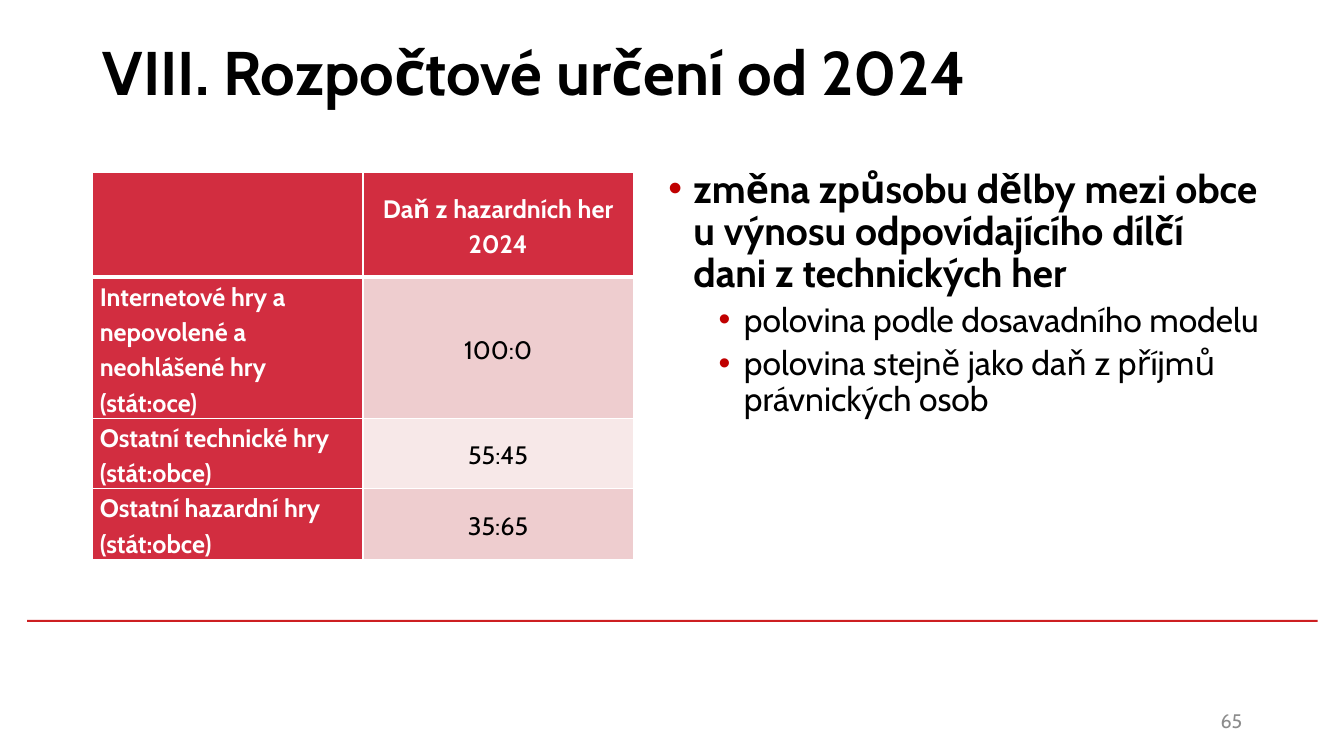
"""Build the slide on how the gambling tax is shared from 2024."""
from lxml.etree import SubElement
from pptx import Presentation
from pptx.dml.color import RGBColor
from pptx.enum.shapes import MSO_SHAPE as Shape
from pptx.enum.text import MSO_ANCHOR as Anchor, PP_ALIGN as Align
from pptx.oxml import parse_xml
from pptx.oxml.ns import nsdecls, qn
from pptx.util import Inches, Pt

COLORS = {
    "text": "000000", "white": "FFFFFF", "rule": "CD1F21", "number": "8C8C8C",
    "bullet": "C00000", "header": "D22D40", "dark_band": "EECDCF", "light_band": "F7E8E8",
}
FONT = "Cabin"
TAX_ROWS = [
    ("", "Daň z\u00a0hazardních her 2024"),
    ("Internetové hry a nepovolené a neohlášené hry\n(stát:oce)", "100:0"),
    ("Ostatní technické hry (stát:obce)", "55:45"),
    ("Ostatní hazardní hry\n(stát:obce)", "35:65"),
]
ROW_HEIGHTS = [1.04, 1.4, 0.7, 0.7]
CHANGES = [
    (0, "změna způsobu dělby mezi obce u výnosu odpovídajícího dílčí dani z technických her"),
    (1, "polovina podle dosavadního modelu"),
    (1, "polovina stejně jako daň z příjmů právnických osob"),
]
LEVELS = [
    {"size": 28, "bold": True, "before": 10, "indent": 0.25},
    {"size": 24, "bold": False, "before": 5, "indent": 0.75},
]


def rgb(name):
    """Return the named colour."""
    return RGBColor.from_string(COLORS[name])


def set_attributes(target, values):
    """Set each attribute of the target from a dict."""
    for name, value in values.items():
        setattr(target, name, value)


def format_paragraph(paragraph, size, color, bold=False, **layout):
    """Apply font and layout values to a paragraph."""
    set_attributes(paragraph, layout)
    set_attributes(paragraph.font, {"name": FONT, "size": Pt(size), "bold": bold})
    paragraph.font.color.rgb = rgb(color)


def add_text_box(slide, box, anchor=Anchor.TOP):
    """Add a wrapping text box and return its text frame."""
    frame = slide.shapes.add_textbox(*map(Inches, box)).text_frame
    set_attributes(frame, {"word_wrap": True, "vertical_anchor": anchor})
    return frame


def add_line_text(slide, box, text, **values):
    """Add a single paragraph centred vertically in its box."""
    frame = add_text_box(slide, box, Anchor.MIDDLE)
    frame.text = text
    format_paragraph(frame.paragraphs[0], **values)


def add_rule(slide):
    """Add the thin red rule across the slide."""
    rule = slide.shapes.add_shape(Shape.RECTANGLE, *map(Inches, (0.27, 6.15, 12.8, 0.02)))
    rule.shadow.inherit = False
    rule.fill.solid()
    rule.fill.fore_color.rgb = rgb("rule")
    rule.line.fill.background()


def add_bullet(paragraph, indent):
    """Give a paragraph a coloured bullet with a hanging indent."""
    properties = paragraph._p.get_or_add_pPr()
    properties.set("marL", str(Inches(indent)))
    properties.set("indent", str(Inches(-0.25)))
    color = SubElement(properties, qn("a:buClr"))
    SubElement(color, qn("a:srgbClr"), val=COLORS["bullet"])
    SubElement(properties, qn("a:buFont"), typeface="Arial")
    SubElement(properties, qn("a:buChar"), char="•")


def add_changes(slide):
    """Add the bulleted list of changes."""
    frame = add_text_box(slide, (6.53, 1.63, 6.06, 4.57))
    for index, (level, text) in enumerate(CHANGES):
        paragraph = frame.paragraphs[0] if index == 0 else frame.add_paragraph()
        style = LEVELS[level]
        paragraph.text = text
        add_bullet(paragraph, style["indent"])
        format_paragraph(paragraph, style["size"], "text", style["bold"], level=level,
                         line_spacing=0.9, space_before=Pt(style["before"] if index else 0))


def set_borders(cell, widths):
    """Draw white cell borders with the given widths in points."""
    properties = cell._tc.get_or_add_tcPr()
    for position, (side, width) in enumerate(widths.items()):
        properties.insert(position, parse_xml(
            f'<a:ln{side} {nsdecls("a")} w="{Pt(width)}"><a:solidFill>'
            f'<a:srgbClr val="{COLORS["white"]}"/></a:solidFill></a:ln{side}>'))


def fill_cell(cell, text, row, column):
    """Write and style one cell by its place in the table."""
    heading = row == 0 or column == 0
    band = "dark_band" if row % 2 else "light_band"
    set_attributes(cell, {
        "text": text, "vertical_anchor": Anchor.MIDDLE, "margin_top": 0, "margin_bottom": 0,
        "margin_left": Inches(0.07), "margin_right": Inches(0.07),
    })
    cell.fill.solid()
    cell.fill.fore_color.rgb = rgb("header" if heading else band)
    set_borders(cell, {"L": 1, "R": 1, "T": 3 if row == 1 else 1, "B": 3 if row == 0 else 1})
    for paragraph in cell.text_frame.paragraphs:
        format_paragraph(paragraph, 18, "white" if heading else "text", heading,
                         alignment=Align.CENTER if column else Align.LEFT, line_spacing=1.15)


def add_tax_table(slide):
    """Add the table of tax shares."""
    box = (0.92, 1.71, 5.36, sum(ROW_HEIGHTS))
    table = slide.shapes.add_table(len(TAX_ROWS), 2, *map(Inches, box)).table
    for row, (texts, height) in enumerate(zip(TAX_ROWS, ROW_HEIGHTS)):
        table.rows[row].height = Inches(height)
        for column, text in enumerate(texts):
            fill_cell(table.cell(row, column), text, row, column)


def main():
    """Build and save the presentation."""
    presentation = Presentation()
    set_attributes(presentation, {"slide_width": Inches(13.33), "slide_height": Inches(7.5)})
    slide = presentation.slides.add_slide(presentation.slide_layouts[6])
    add_rule(slide)
    add_line_text(slide, (0.92, 0.02, 11.5, 1.45), "VIII. Rozpočtové určení od 2024",
                  size=44, color="text", bold=True, line_spacing=0.9)
    add_line_text(slide, (9.42, 6.95, 3, 0.4), "65",
                  size=14, color="number", alignment=Align.RIGHT)
    add_tax_table(slide)
    add_changes(slide)
    presentation.save("out.pptx")


if __name__ == "__main__":
    main()
